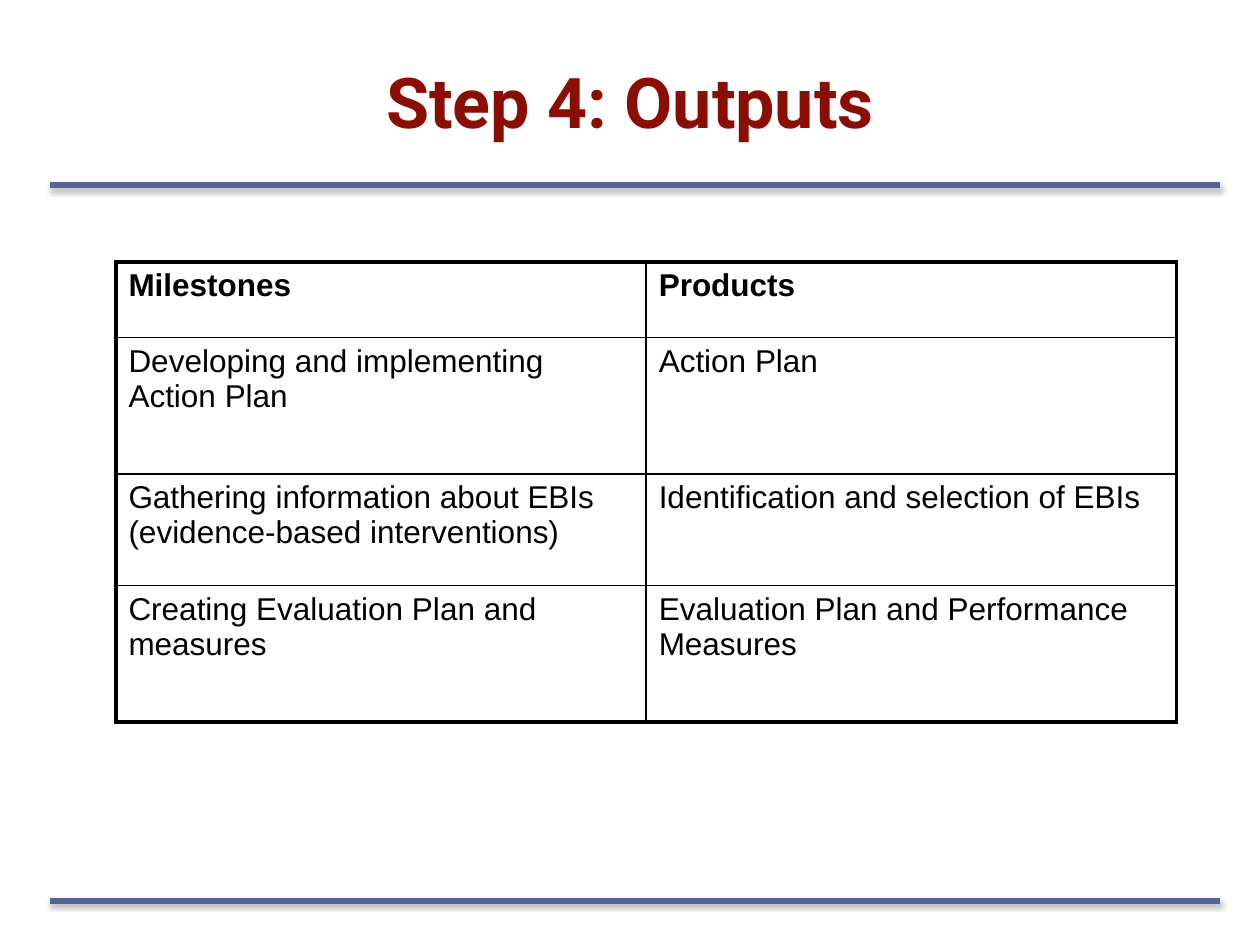
from dataclasses import dataclass

from lxml import etree
from pptx import Presentation
from pptx import util as u
from pptx.dml.color import RGBColor
from pptx.enum import shapes, text
from pptx.oxml import parse_xml
from pptx.oxml.ns import nsdecls, qn

BLACK = "000000"
RULE_BLUE = "556292"
TITLE_RED = "8B0E04"
THIN, THICK = 1, 2.25


@dataclass
class Rule:
    y: float
    left: float = 28.8
    right: float = 697


@dataclass
class Row:
    height: float
    milestone: str
    product: str
    bold: bool = False


RULES = [Rule(105.84), Rule(514.8)]
ROWS = [
    Row(43.2, "Milestones", "Products", True),
    Row(77.8, "Developing and implementing Action Plan", "Action Plan"),
    Row(64, "Gathering information about EBIs (evidence-based interventions)",
        "Identification and selection of EBIs"),
    Row(77.8, "Creating Evaluation Plan and measures",
        "Evaluation Plan and Performance Measures"),
]


def color(value: str) -> RGBColor:
    return RGBColor.from_string(value)


def style_run(r, font: str, size: float, value: str, bold: bool) -> None:
    r.font.name = font
    r.font.size = u.Pt(size)
    r.font.bold = bold
    r.font.color.rgb = color(value)


def add_rule(slide, rule: Rule) -> None:
    sp = slide.shapes.add_connector(
        shapes.MSO_CONNECTOR.STRAIGHT,
        u.Pt(rule.left), u.Pt(rule.y), u.Pt(rule.right), u.Pt(rule.y))
    sp.line.color.rgb = color(RULE_BLUE)
    sp.line.width = u.Pt(3.25)
    sp._element.spPr.append(parse_xml(
        f'<a:effectLst {nsdecls("a")}>'
        f'<a:outerShdw blurRad="{u.Pt(3.1)}" dist="{u.Pt(1.6)}" dir="5400000" '
        f'rotWithShape="0"><a:srgbClr val="{BLACK}"><a:alpha val="38000"/>'
        '</a:srgbClr></a:outerShdw></a:effectLst>'))


def add_title(slide, title: str) -> None:
    sp = slide.shapes.add_textbox(u.Pt(36), u.Pt(21.6), u.Pt(648), u.Pt(71.3))
    tf = sp.text_frame
    tf.word_wrap = True
    tf.vertical_anchor = text.MSO_ANCHOR.MIDDLE
    tf.text = title
    p = tf.paragraphs[0]
    p.alignment = text.PP_ALIGN.CENTER
    style_run(p.runs[0], "Roboto", 40, TITLE_RED, True)


def set_border(cell, side: str, width: float) -> None:
    ln = etree.SubElement(cell._tc.get_or_add_tcPr(), qn(f"a:ln{side}"),
                          w=str(u.Pt(width)))
    fill = etree.SubElement(ln, qn("a:solidFill"))
    etree.SubElement(fill, qn("a:srgbClr"), val=BLACK)


def fill_cell(cell, label: str, bold: bool, outer: dict[str, bool]) -> None:
    cell.text = label
    style_run(cell.text_frame.paragraphs[0].runs[0], "Arial", 18, BLACK, bold)
    for side, is_outer in outer.items():
        set_border(cell, side, THICK if is_outer else THIN)
    cell.fill.background()


def add_outputs_table(slide, rows: list[Row]) -> None:
    table = slide.shapes.add_table(
        len(rows), 2, u.Pt(66.25), u.Pt(149.75), u.Pt(606),
        u.Pt(sum(row.height for row in rows))).table
    table.first_row = table.horz_banding = False
    for column in table.columns:
        column.width = u.Pt(303)
    for i, row in enumerate(rows):
        table.rows[i].height = u.Pt(row.height)
        for j, label in enumerate((row.milestone, row.product)):
            outer = {"L": j == 0, "R": j == 1,
                     "T": i == 0, "B": i == len(rows) - 1}
            fill_cell(table.cell(i, j), label, row.bold, outer)


def main() -> None:
    prs = Presentation()
    prs.slide_width, prs.slide_height = u.Pt(720), u.Pt(540)
    slide = prs.slides.add_slide(prs.slide_layouts[6])
    for rule in RULES:
        add_rule(slide, rule)
    add_title(slide, "Step 4: Outputs")
    add_outputs_table(slide, ROWS)
    prs.save("out.pptx")


if __name__ == "__main__":
    main()
